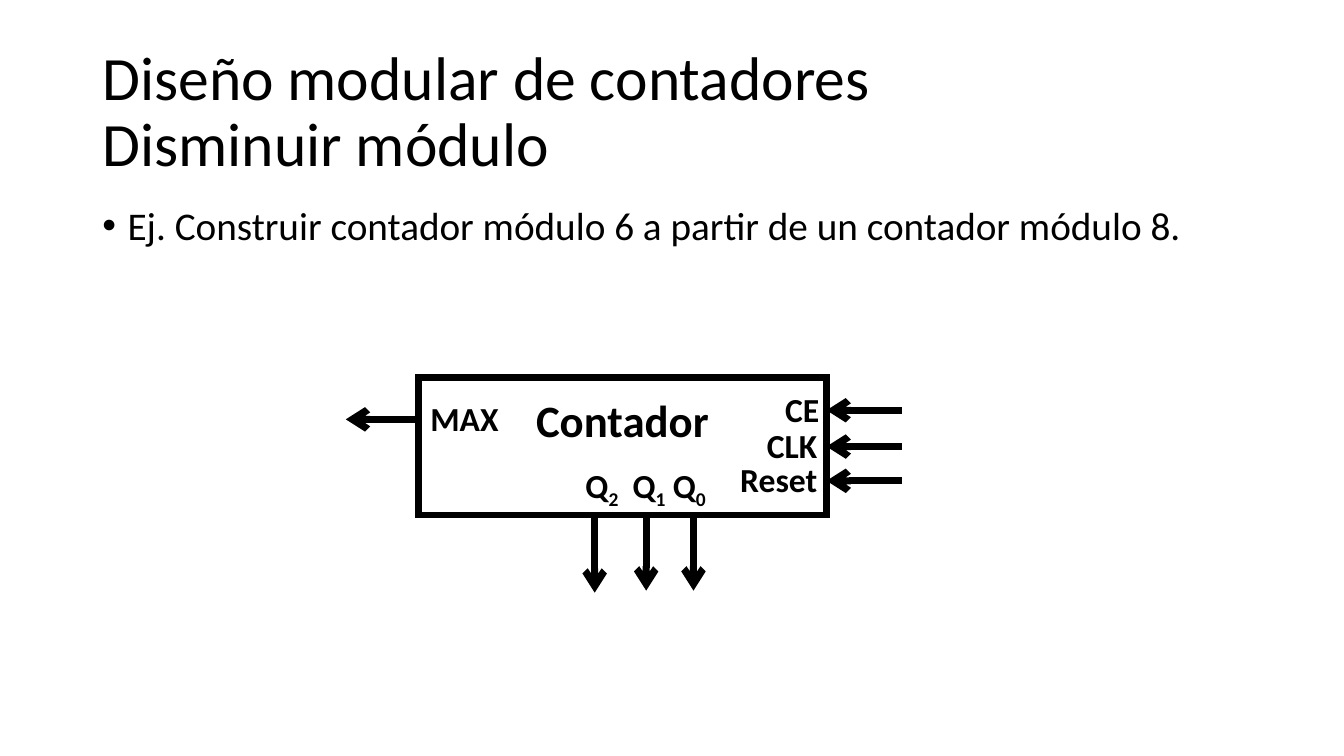
from lxml.etree import SubElement
from pptx import Presentation
from pptx.dml.color import RGBColor
from pptx.enum.shapes import MSO_CONNECTOR, MSO_SHAPE
from pptx.enum.text import MSO_ANCHOR, PP_ALIGN
from pptx.oxml.ns import qn
from pptx.util import Inches, Pt

COLORS = {"ink": "000000", "paper": "FFFFFF"}
INK = RGBColor.from_string(COLORS["ink"])
LINE_WIDTH = Pt(5)

presentation = Presentation()
presentation.slide_width = Inches(13.33)
presentation.slide_height = Inches(7.5)
slide = presentation.slides.add_slide(presentation.slide_layouts[6])

# Grid of 100 columns by 100 rows
COLUMN = presentation.slide_width / 100
ROW = presentation.slide_height / 100


def add_text(left, top, width, height, text, size, bold=False, align=PP_ALIGN.LEFT):
    """Add a one-paragraph text box, placed in grid columns and rows."""
    box = slide.shapes.add_textbox(
        int(left * COLUMN), int(top * ROW), int(width * COLUMN), int(height * ROW))
    box.text_frame.word_wrap = True
    paragraph = box.text_frame.paragraphs[0]
    paragraph.text = text
    paragraph.alignment = align
    font = paragraph.font
    font.name, font.size, font.bold = "Calibri", Pt(size), bold
    font.color.rgb = INK
    return box


def add_arrow(start_x, start_y, end_x, end_y):
    arrow = slide.shapes.add_connector(
        MSO_CONNECTOR.STRAIGHT, int(start_x * COLUMN), int(start_y * ROW),
        int(end_x * COLUMN), int(end_y * ROW))
    arrow.line.color.rgb = INK
    arrow.line.width = LINE_WIDTH
    SubElement(arrow.line._get_or_add_ln(), qn("a:tailEnd"), type="arrow")
    SubElement(arrow._element.spPr, qn("a:effectLst"))


# Title and example
TEXT_LEFT, TEXT_WIDTH = 6.88, 86.25
title = add_text(TEXT_LEFT, 5.33, TEXT_WIDTH, 19.33,
                 "Diseño modular de contadores\vDisminuir módulo", 44)
title.text_frame.vertical_anchor = MSO_ANCHOR.MIDDLE
title.text_frame.paragraphs[0].line_spacing = 0.9

example = add_text(TEXT_LEFT, 26.67, TEXT_WIDTH, 63.47,
                   "Ej. Construir contador módulo 6 a partir de un contador módulo 8.", 28)
paragraph = example.text_frame.paragraphs[0]
paragraph.line_spacing = 0.9
properties = paragraph._p.get_or_add_pPr()
properties.set("marL", str(Inches(0.25)))
properties.set("indent", str(-Inches(0.25)))
default_run = properties.find(qn("a:defRPr"))
for tag, attributes in (("a:buFont", {"typeface": "Arial"}), ("a:buChar", {"char": "•"})):
    default_run.addprevious(properties.makeelement(qn(tag), attributes))

# Counter block
LEFT, RIGHT, TOP, BOTTOM = 31.13, 61.5, 50, 68.13
counter = slide.shapes.add_shape(
    MSO_SHAPE.RECTANGLE, int(LEFT * COLUMN), int(TOP * ROW),
    int((RIGHT - LEFT) * COLUMN), int((BOTTOM - TOP) * ROW))
counter.shadow.inherit = False
counter.fill.solid()
counter.fill.fore_color.rgb = RGBColor.from_string(COLORS["paper"])
counter.line.color.rgb = INK
counter.line.width = LINE_WIDTH
SubElement(counter.line._get_or_add_ln(), qn("a:miter"), lim="800000")
counter.text_frame.vertical_anchor = MSO_ANCHOR.TOP
counter.text_frame.margin_top = int(1.9 * ROW)
paragraph = counter.text_frame.paragraphs[0]
paragraph.text = "Contador"
paragraph.alignment = PP_ALIGN.CENTER
paragraph.font.name, paragraph.font.size, paragraph.font.bold = "Calibri", Pt(32), True
paragraph.font.color.rgb = INK

# Pins
LABEL_HEIGHT, LABEL_RISE, PIN_SIZE = 6.67, 3.55, 24
INPUT_WIDTH, OUTPUT_WIDTH = 9, 6

for name, y, label_right in (("CE", 54.27, 61.7), ("CLK", 59.07, 61.55), ("Reset", 63.6, 61.55)):
    add_arrow(RIGHT + 5.63, y, RIGHT, y)
    add_text(label_right - INPUT_WIDTH, y - LABEL_RISE, INPUT_WIDTH, LABEL_HEIGHT,
             name, PIN_SIZE, bold=True, align=PP_ALIGN.RIGHT)

MAX_Y = 55.47
add_arrow(LEFT, MAX_Y, LEFT - 5.4, MAX_Y)
add_text(LEFT + 0.15, MAX_Y - LABEL_RISE, 8, LABEL_HEIGHT, "MAX", PIN_SIZE, bold=True)

for digit, wire_x, wire_end, label_right in (
        ("2", 44.25, 78.4, 46.75), ("1", 48.08, 78.13, 50.25), ("0", 51.6, 78.13, 53.25)):
    add_arrow(wire_x, BOTTOM, wire_x, wire_end)
    output = add_text(label_right - OUTPUT_WIDTH, 60.8, OUTPUT_WIDTH, LABEL_HEIGHT,
                      "Q", PIN_SIZE, bold=True, align=PP_ALIGN.RIGHT)
    subscript = output.text_frame.paragraphs[0].add_run()
    subscript.text = digit
    subscript.font._element.set("baseline", "-25000")

presentation.save("out.pptx")
